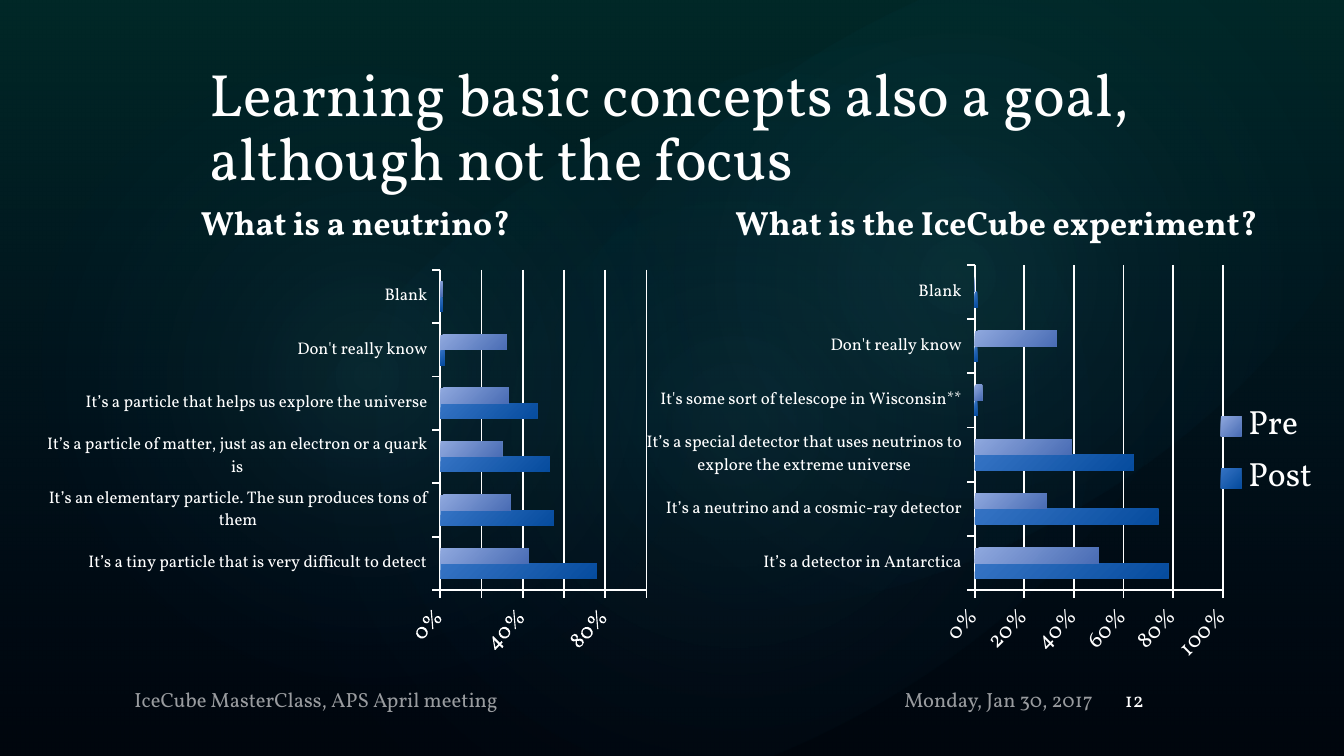
from lxml import etree
from pptx import Presentation
from pptx import util as u
from pptx.chart.data import CategoryChartData
from pptx.dml.color import RGBColor
from pptx.enum import chart as ch, shapes, text
from pptx.oxml import ns, parse_xml

FONT = "Vollkorn"
COLORS = {
    "night": "000000", "white": "FFFFFF", "teal": "03706E", "navy": "073E87", "glow": "5AFBF8",
    "pre_light": "8FA8DE", "pre_dark": "4A6DB5", "post_light": "3573C4", "post_dark": "064C9E",
}
PRE = ("pre_light", "pre_dark")
POST = ("post_light", "post_dark")


def cm_box(left, top, width, height):
    return u.Cm(left), u.Cm(top), u.Cm(width), u.Cm(height)


def rgb(name):
    return RGBColor.from_string(COLORS[name])


def set_alpha(fill, percent):
    color = fill._xPr.find(".//" + ns.qn("a:srgbClr"))
    etree.SubElement(color, ns.qn("a:alpha")).set("val", str(percent * 1000))


def set_gradient(properties, stops, direction):
    """Put a gradient of (position, colour, opacity) stops in place of the fill."""
    for tag in ("a:solidFill", "a:gradFill", "a:noFill"):
        for old in properties.findall(ns.qn(tag)):
            properties.remove(old)
    stop_xml = "".join(
        f'<a:gs pos="{pos * 1000}"><a:srgbClr val="{COLORS[name]}">'
        f'<a:alpha val="{opacity * 1000}"/></a:srgbClr></a:gs>'
        for pos, name, opacity in stops)
    gradient = parse_xml(f'<a:gradFill {ns.nsdecls("a")} rotWithShape="1">'
                         f'<a:gsLst>{stop_xml}</a:gsLst>{direction}</a:gradFill>')
    geometry = properties.find(ns.qn("a:prstGeom"))
    if geometry is None:
        properties.insert(0, gradient)
    else:
        geometry.addnext(gradient)


def linear(degrees):
    return f'<a:lin ang="{degrees * 60000}" scaled="0"/>'


def format_font(font, size, bold=False, color="white"):
    font.name, font.size, font.bold = FONT, u.Pt(size), bold
    font.color.rgb = rgb(color)


def write_text(shape, words, size=11, align=text.PP_ALIGN.LEFT,
               anchor=text.MSO_ANCHOR.MIDDLE, spacing=1.0, opacity=100):
    frame = shape.text_frame
    frame.word_wrap = True
    frame.auto_size = text.MSO_AUTO_SIZE.NONE
    frame.vertical_anchor = anchor
    paragraph = frame.paragraphs[0]
    paragraph.alignment, paragraph.line_spacing = align, spacing
    run = paragraph.add_run()
    run.text = words
    format_font(run.font, size)
    if opacity < 100:
        set_alpha(run.font.fill, opacity)


def add_glow(slide, kind, box, stops, direction, rotation=0):
    glow = slide.shapes.add_shape(kind, *cm_box(*box))
    glow.shadow.inherit = False
    glow.line.fill.background()
    glow.rotation = rotation
    set_gradient(glow._element.spPr, stops, direction)


def add_backdrop(slide, box):
    slide.background.fill.solid()
    slide.background.fill.fore_color.rgb = rgb("night")
    add_glow(slide, shapes.MSO_SHAPE.RECTANGLE, box,
             [(0, "teal", 36), (100, "navy", 10)], linear(90))
    circle = '<a:path path="circle"><a:fillToRect l="50000" t="50000" r="50000" b="50000"/></a:path>'
    for oval, rotation, opacity in [((3.81, 2.08, 20.12, 11.89), 328.7, 7),
                                    ((1.17, 0.86, 11.53, 12.45), 294.3, 8),
                                    ((9.09, 0.25, 18.01, 9.91), 328.7, 8)]:
        add_glow(slide, shapes.MSO_SHAPE.OVAL, oval,
                 [(0, "glow", opacity), (58, "navy", 0)], circle, rotation)


def add_heading(slide, box, words):
    heading = slide.shapes.title
    heading.left, heading.top, heading.width, heading.height = cm_box(*box)
    heading.text_frame.margin_bottom = 0
    write_text(heading, words, size=32, anchor=text.MSO_ANCHOR.BOTTOM, spacing=0.9)
    slide.shapes._spTree.append(heading._element)  # in front of the backdrop


def add_footer(slide, box):
    left, top, width, height = box
    date_left, number_left = left + 12.7, left + 18.72
    for words, x, w, align, opacity in [
            ("IceCube MasterClass, APS April meeting", left, 12.7, text.PP_ALIGN.LEFT, 60),
            ("Monday, Jan 30, 2017", date_left, 5.92, text.PP_ALIGN.RIGHT, 60),
            ("12", number_left, left + width - number_left, text.PP_ALIGN.LEFT, 100)]:
        part = slide.shapes.add_textbox(*cm_box(x, top, w, height))
        write_text(part, words, align=align, opacity=opacity)


def layout_xml(x, y, w, h, inner=False):
    target = '<c:layoutTarget val="inner"/>' if inner else ""
    return parse_xml(
        f'<c:layout {ns.nsdecls("c")}><c:manualLayout>{target}'
        '<c:xMode val="edge"/><c:yMode val="edge"/>'
        f'<c:x val="{x}"/><c:y val="{y}"/><c:w val="{w}"/><c:h val="{h}"/>'
        '</c:manualLayout></c:layout>')


def format_axis(axis, size):
    format_font(axis.tick_labels.font, size)
    axis.major_tick_mark = ch.XL_TICK_MARK.OUTSIDE
    axis.minor_tick_mark = ch.XL_TICK_MARK.NONE
    axis.format.line.color.rgb = rgb("white")
    axis.format.line.width = u.Pt(1)


def add_survey(slide, box, question, answers, series, plot_area, legend_area=None):
    """Bar chart of answers; series holds (name, gradient) and answers their values."""
    data = CategoryChartData(number_format="0%")
    data.categories = [answer for answer, *_ in answers]
    for column, (name, _) in enumerate(series, start=1):
        data.add_series(name, [answer[column] for answer in answers])
    survey = slide.shapes.add_chart(ch.XL_CHART_TYPE.BAR_CLUSTERED, *cm_box(*box), data).chart
    format_font(survey.font, 18)

    # Question
    survey.has_title = True
    survey.chart_title.include_in_layout = False
    survey.chart_title.text_frame.text = question
    format_font(survey.chart_title.text_frame.paragraphs[0].runs[0].font, 18, bold=True)

    # Bars
    plot = survey.plots[0]
    plot.gap_width, plot.overlap, plot.vary_by_categories = 150, 0, False
    for bars, (_, (light, dark)) in zip(plot.series, series):
        bars.format.fill.solid()
        bars.invert_if_negative = False
        set_gradient(bars._element.spPr, [(0, light, 100), (100, dark, 100)], linear(45))

    # Axes
    format_axis(survey.category_axis, 9)
    share = survey.value_axis
    format_axis(share, 12)
    share.minimum_scale, share.maximum_scale, share.major_unit = 0, 1, 0.2
    share.tick_labels.number_format, share.tick_labels.number_format_is_linked = "0%", False
    share.has_major_gridlines = True
    share.major_gridlines.format.line.color.rgb = rgb("white")
    share.major_gridlines.format.line.width = u.Pt(1)
    share._element.find(ns.qn("c:txPr")).find(ns.qn("a:bodyPr")).set("rot", "-2700000")

    # Plot and legend places
    area = survey._chartSpace.chart.plotArea
    for old in area.findall(ns.qn("c:layout")):
        area.remove(old)
    area.insert(0, layout_xml(*plot_area, inner=True))
    survey.has_legend = legend_area is not None
    if legend_area:
        survey.legend.position = ch.XL_LEGEND_POSITION.RIGHT
        survey.legend.include_in_layout = False
        format_font(survey.legend.font, 18)
        survey.legend._element.find(ns.qn("c:legendPos")).addnext(layout_xml(*legend_area))


def main():
    deck = Presentation()
    deck.slide_width, deck.slide_height = u.Cm(25.4), u.Cm(14.29)
    slide = deck.slides.add_slide(deck.slide_layouts[5])
    add_backdrop(slide, (0, 0, 25.4, 14.29))
    add_heading(slide, (3.71, 1.75, 19.41, 1.91),
                "Learning basic concepts also a goal, although not the focus")
    add_footer(slide, (2.29, 12.84, 20.83, 0.76))
    add_survey(slide, (0.89, 3.33, 11.56, 9.32), "What is a neutrino?", [
        ("It’s a tiny particle that is very difficult to detect", 0.76, 0.43),
        ("It’s an elementary particle. The sun produces tons of them", 0.55, 0.34),
        ("It’s a particle of matter, just as an electron or a quark is", 0.53, 0.3),
        ("It’s a particle that helps us explore the universe", 0.47, 0.33),
        ("Don't really know", 0.02, 0.32),
        ("Blank", 0.01, 0.01),
    ], [("Series 1", POST), ("Series 2", PRE)], (0.64, 0.19, 0.34, 0.65))
    add_survey(slide, (11.94, 3.33, 13.79, 9.32), "What is the IceCube experiment?", [
        ("It’s a detector in Antarctica", 0.78, 0.5),
        ("It’s a neutrino and a cosmic-ray detector", 0.74, 0.29),
        ("It’s a special detector that uses neutrinos to explore the extreme universe", 0.64, 0.39),
        ("It's some sort of telescope in Wisconsin**", 0.01, 0.03),
        ("Don't really know", 0.01, 0.33),
        ("Blank", 0.01, 0),
    ], [("Post", POST), ("Pre", PRE)], (0.47, 0.18, 0.34, 0.66), (0.78, 0.45, 0.18, 0.22))
    deck.save("out.pptx")


if __name__ == "__main__":
    main()
